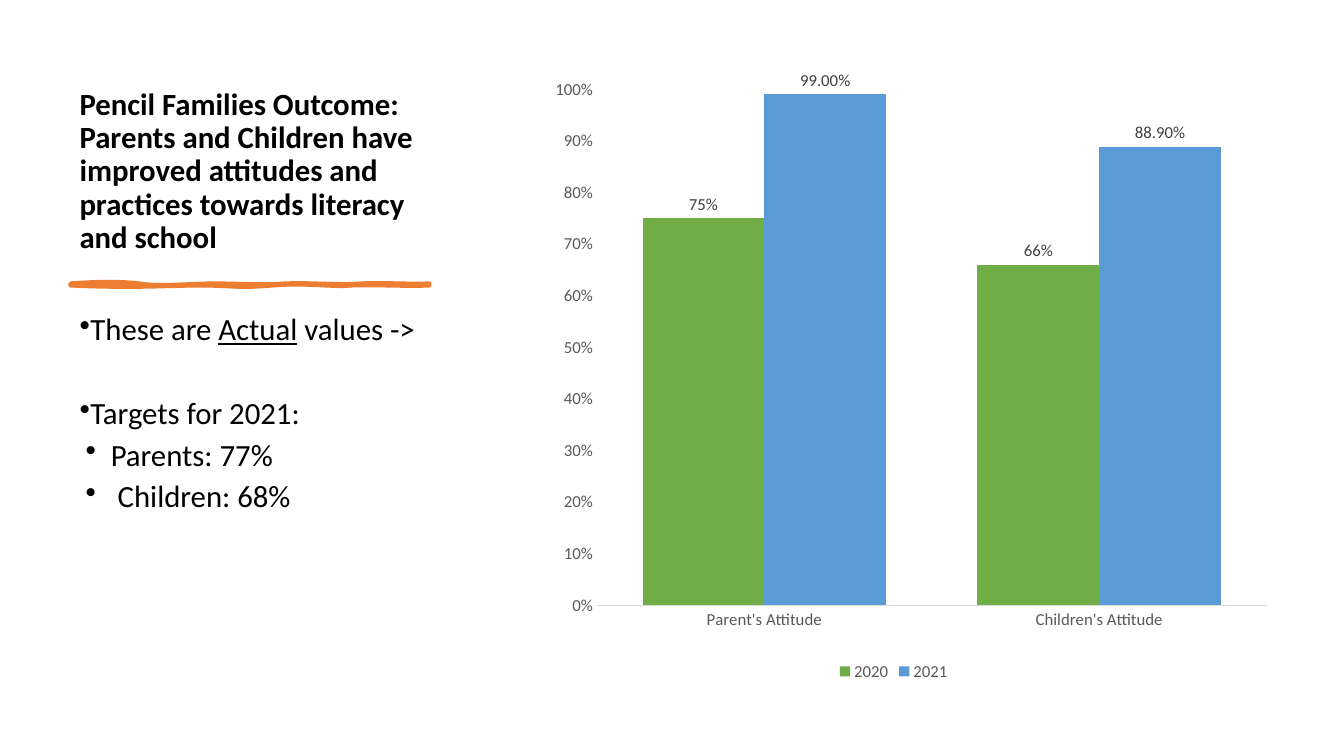
from lxml import etree
from pptx import Presentation
from pptx import util as u
from pptx.chart.data import CategoryChartData
from pptx.dml.color import RGBColor
from pptx.enum import chart as charts, text
from pptx.oxml import parse_xml
from pptx.oxml.ns import nsdecls, qn


def colour(hex_string):
    return RGBColor.from_string(hex_string)


class OutcomeSlide:
    FONT = "Calibri"
    INK, GREY, LABEL, RULE = "000000", "595959", "404040", "D9D9D9"
    ACCENT, GREEN, BLUE = "ED7D31", "70AD47", "5B9BD5"
    BODY_SIZE, CHART_SIZE = 22, 12

    def __init__(self, deck):
        self.width, self.height = deck.slide_width, deck.slide_height
        self.slide = deck.slides.add_slide(deck.slide_layouts[6])

    def box(self, left, top, width, height):
        """Turn percentages of the slide into lengths."""
        return (int(self.width * left / 100), int(self.height * top / 100),
                int(self.width * width / 100), int(self.height * height / 100))

    def style(self, font, size, ink, bold=False):
        font.name, font.size, font.bold = self.FONT, u.Pt(size), bold
        font.color.rgb = colour(ink)

    def text_frame(self, place, anchor):
        frame = self.slide.shapes.add_textbox(*self.box(*place)).text_frame
        frame.word_wrap = True
        frame.vertical_anchor = anchor
        return frame

    def title(self, place, wording):
        paragraph = self.text_frame(place, text.MSO_ANCHOR.BOTTOM).paragraphs[0]
        paragraph.text = wording
        paragraph.line_spacing = 0.9
        self.style(paragraph.font, self.BODY_SIZE, self.INK, bold=True)

    def bullets(self, place, items):
        """Each item is (runs, indent, space after); a run is (words, underlined)."""
        frame = self.text_frame(place, text.MSO_ANCHOR.TOP)
        for number, (runs, indent, space_after) in enumerate(items):
            paragraph = frame.add_paragraph() if number else frame.paragraphs[0]
            for words, underlined in runs:
                run = paragraph.add_run()
                run.text = words
                if underlined:
                    run.font.underline = True
            paragraph.line_spacing = 0.9
            paragraph.space_after = u.Pt(space_after)
            self.style(paragraph.font, self.BODY_SIZE, self.INK)
            properties = paragraph._p.get_or_add_pPr()
            properties.set("marL", str(u.Inches(indent)))
            properties.set("indent", str(u.Inches(-0.25)))
            bullet = parse_xml(f'<a:buChar {nsdecls("a")} char="•"/>')
            properties.find(qn("a:defRPr")).addprevious(bullet)

    def brush_stroke(self, left, top, width, length, curves, steps=8):
        """Draw a closed outline of cubic curves, 'length' units long."""
        x, y, across, _ = self.box(left, top, width, 0)
        scale = across / length
        points, start = [(0, 0)], (0, 0)
        for first, second, end in curves:
            for step in range(1, steps + 1):
                t = step / steps
                weights = ((1 - t) ** 3, 3 * t * (1 - t) ** 2, 3 * t * t * (1 - t), t ** 3)
                corners = (start, first, second, end)
                points.append(tuple(
                    sum(w * c[axis] for w, c in zip(weights, corners)) * scale
                    for axis in (0, 1)))
            start = end
        builder = self.slide.shapes.build_freeform(0, 0)
        builder.add_line_segments(points[1:], close=True)
        stroke = builder.convert_to_shape(x, y)
        stroke.shadow.inherit = False
        stroke.fill.solid()
        stroke.fill.fore_color.rgb = colour(self.ACCENT)
        stroke.line.color.rgb = colour(self.ACCENT)
        stroke.line.width = u.Pt(3)
        etree.SubElement(stroke.line._get_or_add_ln(), qn("a:round"))

    def column_chart(self, place, categories, series, plot_area):
        """Each series is (name, values, fill, label format)."""
        data = CategoryChartData()
        data.categories = categories
        for name, values, _, label_format in series:
            data.add_series(name, values, label_format)
        chart = self.slide.shapes.add_chart(
            charts.XL_CHART_TYPE.COLUMN_CLUSTERED, *self.box(*place), data).chart
        chart.has_title = False
        self.style(chart.font, self.CHART_SIZE, self.GREY)

        # Columns and their labels
        plot = chart.plots[0]
        plot.gap_width, plot.overlap = 75, 0
        plot.vary_by_categories = False
        for columns, (_, _, fill, label_format) in zip(plot.series, series):
            columns.format.fill.solid()
            columns.format.fill.fore_color.rgb = colour(fill)
            labels = columns.data_labels
            labels.show_value = True
            labels.number_format, labels.number_format_is_linked = label_format, False
            labels.position = charts.XL_LABEL_POSITION.OUTSIDE_END
            self.style(labels.font, self.CHART_SIZE, self.LABEL)

        # Axes
        for axis in (chart.category_axis, chart.value_axis):
            axis.has_major_gridlines = False
            axis.major_tick_mark = axis.minor_tick_mark = charts.XL_TICK_MARK.NONE
            self.style(axis.tick_labels.font, self.CHART_SIZE, self.GREY)
        chart.category_axis.format.line.color.rgb = colour(self.RULE)
        chart.category_axis.format.line.width = u.Pt(0.75)
        scale = chart.value_axis
        scale.format.line.fill.background()
        scale.minimum_scale, scale.maximum_scale, scale.major_unit = 0, 1, 0.1
        scale.tick_labels.number_format = "0%"
        scale.tick_labels.number_format_is_linked = False

        # Legend
        chart.has_legend = True
        chart.legend.position = charts.XL_LEGEND_POSITION.BOTTOM
        chart.legend.include_in_layout = False
        self.style(chart.legend.font, self.CHART_SIZE, self.GREY)

        # Inner plot area, as shares of the chart
        area = chart._chartSpace.find(".//" + qn("c:plotArea"))
        for old in area.findall(qn("c:layout")):
            area.remove(old)
        sides = "".join(f'<c:{side} val="{share}"/>'
                        for side, share in zip("xywh", plot_area))
        area.insert(0, parse_xml(
            f'<c:layout {nsdecls("c")}><c:manualLayout><c:layoutTarget val="inner"/>'
            f'<c:xMode val="edge"/><c:yMode val="edge"/>{sides}'
            '</c:manualLayout></c:layout>'))


def main():
    deck = Presentation()
    deck.slide_width, deck.slide_height = u.Inches(13.33), u.Inches(7.5)
    outcome = OutcomeSlide(deck)

    # Heading
    outcome.title((5.18, 9.33, 28.13, 25.07),
                  "Pencil Families Outcome: \vParents and Children have improved "
                  "attitudes and practices towards literacy and school")

    # Hand-drawn divider
    outcome.brush_stroke(5.25, 37.5, 26.7, 356, [
        ((27, -2), (51, -2), (68, 0)), ((85, 3), (107, 1), (139, 0)),
        ((171, 0), (190, 2), (214, 0)), ((238, -1), (269, 2), (289, 0)),
        ((309, -1), (342, 1), (356, 0)), ((356, 1), (356, 2), (356, 2)),
        ((338, 3), (294, 1), (278, 2)), ((262, 4), (234, -1), (200, 2)),
        ((165, 5), (161, 2), (129, 2)), ((96, 2), (62, 5), (0, 2)),
        ((0, 2), (0, 1), (0, 0))])

    # Targets
    outcome.bullets((5.18, 40.93, 28.13, 49.73), [
        ([("These are ", False), ("Actual", True), (" values ->", False)], 0, 36),
        ([("Targets for 2021:", False)], 0, 6),
        ([("Parents: 77%", False)], 0.31, 6),
        ([(" Children: 68%", False)], 0.31, 6)])

    # Actual values
    outcome.column_chart(
        (38.18, 9.33, 56.64, 81.33),
        ["Parent's Attitude", "Children's Attitude"],
        [("2020", (0.75, 0.66), outcome.GREEN, "0%"),
         ("2021", (0.99, 0.889), outcome.BLUE, "0.00%")],
        (0.11, 0.03, 0.88, 0.84))

    deck.save("out.pptx")


if __name__ == "__main__":
    main()
